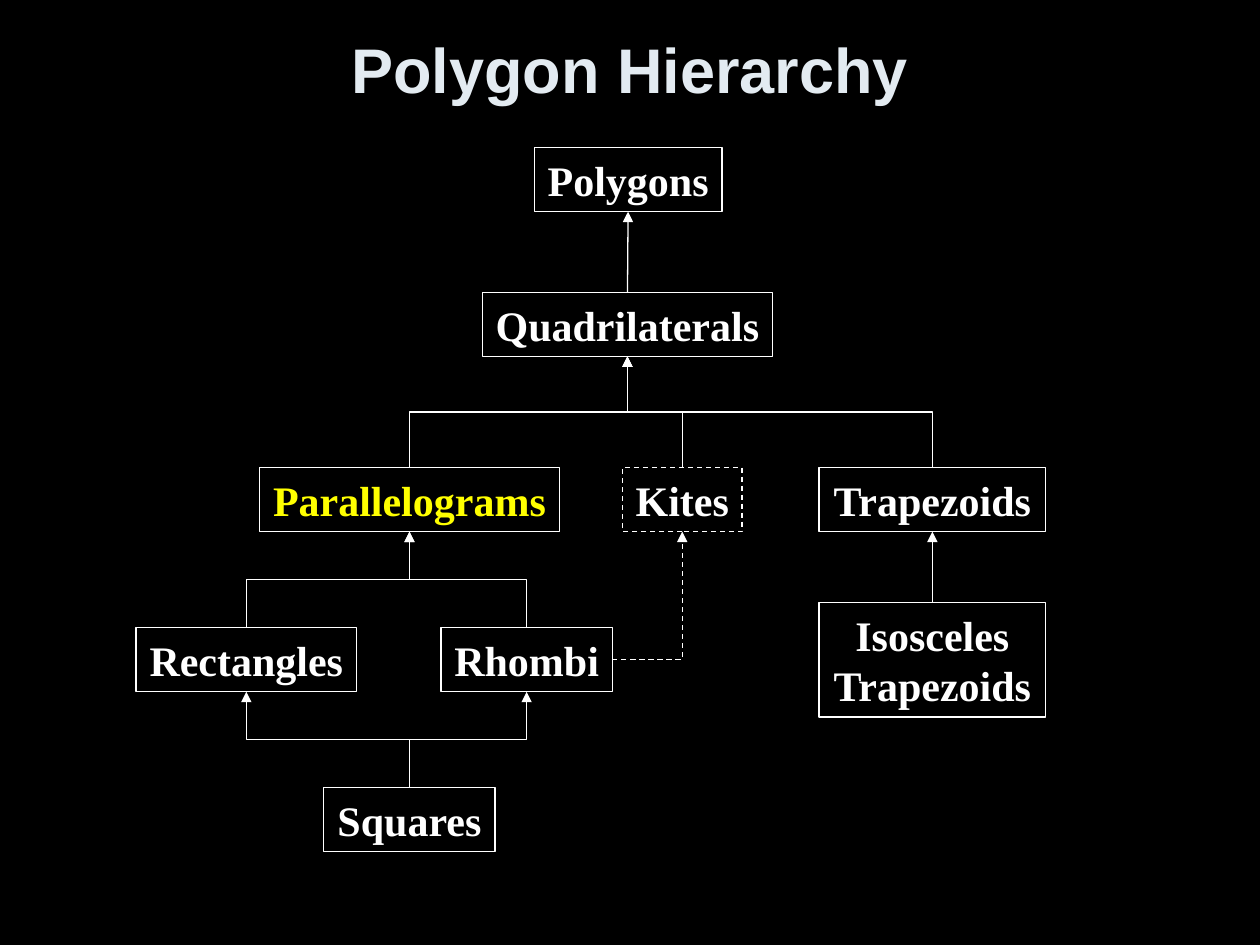
from dataclasses import dataclass

from lxml import etree
from pptx import Presentation
from pptx.dml.color import RGBColor
from pptx.enum.dml import MSO_LINE
from pptx.enum.shapes import MSO_CONNECTOR, MSO_SHAPE
from pptx.enum.text import MSO_ANCHOR, MSO_AUTO_SIZE, PP_ALIGN
from pptx.oxml.ns import qn
from pptx.util import Inches, Pt

RECT = MSO_SHAPE.RECTANGLE
STRAIGHT, ELBOW = MSO_CONNECTOR.STRAIGHT, MSO_CONNECTOR.ELBOW
DASH = MSO_LINE.DASH
CENTER, MIDDLE = PP_ALIGN.CENTER, MSO_ANCHOR.MIDDLE
FIT_SHAPE = MSO_AUTO_SIZE.SHAPE_TO_FIT_TEXT
TOP, BOTTOM, RIGHT = 0, 2, 3

BLACK, WHITE, YELLOW, PALE = "000000", "FFFFFF", "FFFF00", "E3EBF1"
TITLE_FONT = {"name": "Arial", "size": Pt(36), "bold": True}
BOX_FONT = {"name": "Times New Roman", "size": Pt(24), "bold": True}


@dataclass
class Box:
    text: str
    left: float
    top: float
    width: float
    height: float = 0.51
    color: str = WHITE
    dashed: bool = False


@dataclass
class Link:
    child: str
    parent: str
    kind: str = "tree"  # "tree", "straight" or "side"


BOXES = [
    Box("Polygons", 4.24, 1.17, 1.49),
    Box("Quadrilaterals", 3.83, 2.32, 2.3),
    Box("Parallelograms", 2.06, 3.71, 2.38, color=YELLOW),
    Box("Kites", 4.94, 3.71, 0.95, dashed=True),
    Box("Trapezoids", 6.5, 3.71, 1.8),
    Box("Rectangles", 1.08, 4.98, 1.75),
    Box("Rhombi", 3.5, 4.98, 1.36),
    Box("Isosceles\nTrapezoids", 6.5, 4.78, 1.8, 0.91),
    Box("Squares", 2.57, 6.25, 1.36),
]

LINKS = [
    Link("Quadrilaterals", "Polygons", "straight"),
    Link("Parallelograms", "Quadrilaterals"),
    Link("Kites", "Quadrilaterals"),
    Link("Trapezoids", "Quadrilaterals"),
    Link("Rectangles", "Parallelograms"),
    Link("Rhombi", "Parallelograms"),
    Link("Isosceles\nTrapezoids", "Trapezoids", "straight"),
    Link("Squares", "Rectangles"),
    Link("Squares", "Rhombi"),
    Link("Rhombi", "Kites", "side"),
]


def rgb(color: str) -> RGBColor:
    return RGBColor.from_string(color)


def write(tf, text: str, font: dict, color: str) -> None:
    tf.vertical_anchor = MIDDLE
    p = tf.paragraphs[0]
    p.text = text
    p.alignment = CENTER
    for r in p.runs:
        for name, value in font.items():
            setattr(r.font, name, value)
        r.font.color.rgb = rgb(color)


def style_line(line, dashed: bool) -> None:
    line.color.rgb = rgb(WHITE)
    line.width = Pt(0.75)
    if dashed:
        line.dash_style = DASH


def add_box(s, box: Box):
    sp = s.shapes.add_shape(RECT, Inches(box.left), Inches(box.top),
                            Inches(box.width), Inches(box.height))
    sp.shadow.inherit = False
    sp.fill.background()
    style_line(sp.line, box.dashed)
    tf = sp.text_frame
    tf.word_wrap = False
    tf.auto_size = FIT_SHAPE
    write(tf, box.text, BOX_FONT, box.color)
    return sp


def turn_upright(cxn) -> None:
    """Turn an elbow so that it leaves and arrives vertically."""
    x1, y1, x2, y2 = cxn.begin_x, cxn.begin_y, cxn.end_x, cxn.end_y
    rise, run = y1 - y2, abs(x2 - x1)
    cxn.left, cxn.top = (x1 + x2 - rise) // 2, (y1 + y2 - run) // 2
    cxn.width, cxn.height = rise, run
    leftward = x2 < x1
    xfrm = cxn._element.spPr.find(qn("a:xfrm"))
    xfrm.set("rot", str((90 if leftward else 270) * 60000))
    xfrm.set("flipH", "1" if leftward else "0")
    xfrm.set("flipV", "0")


def add_link(s, link: Link, shapes: dict) -> None:
    kind = STRAIGHT if link.kind == "straight" else ELBOW
    cxn = s.shapes.add_connector(kind, 0, 0, 0, 0)
    cxn.begin_connect(shapes[link.child], RIGHT if link.kind == "side" else TOP)
    cxn.end_connect(shapes[link.parent], BOTTOM)
    style_line(cxn.line, link.kind == "side")
    spPr = cxn._element.spPr
    if link.kind == "tree":
        turn_upright(cxn)
    elif link.kind == "side":
        spPr.find(qn("a:prstGeom")).set("prst", "bentConnector2")
    etree.SubElement(spPr.find(qn("a:ln")), qn("a:tailEnd"), type="triangle")
    etree.SubElement(spPr, qn("a:effectLst"))


def main() -> None:
    prs = Presentation()
    prs.slide_width, prs.slide_height = Inches(10), Inches(7.5)
    s = prs.slides.add_slide(prs.slide_layouts[6])
    s.background.fill.solid()
    s.background.fill.fore_color.rgb = rgb(BLACK)

    # Title
    title = s.shapes.add_textbox(Inches(0.75), Inches(0.17), Inches(8.5), Inches(0.75))
    title.text_frame.word_wrap = True
    write(title.text_frame, "Polygon Hierarchy", TITLE_FONT, PALE)

    # Polygon classes and the arrows to their parents
    shapes = {box.text: add_box(s, box) for box in BOXES}
    for link in LINKS:
        add_link(s, link, shapes)

    prs.save("out.pptx")


if __name__ == "__main__":
    main()
